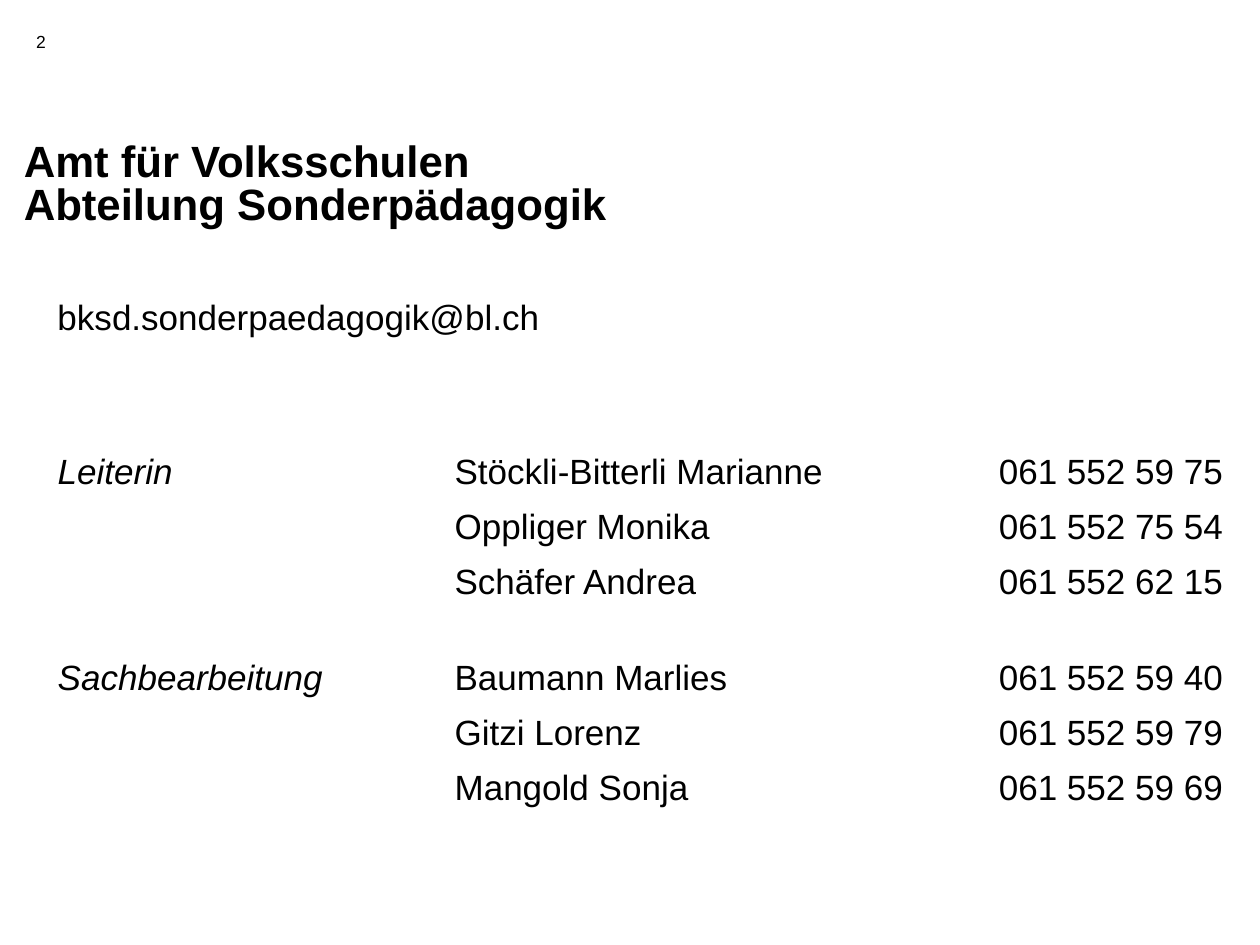
from pptx import Presentation
from pptx.dml.color import RGBColor
from pptx.enum.text import MSO_ANCHOR, PP_ALIGN
from pptx.util import Cm, Pt

BLACK = RGBColor(0, 0, 0)
LEFT = 0.91
WIDTH = 24
ROW = 1.11


def style(para, **extra):
    values = {"name": "Arial", "size": Pt(20), "bold": False, "italic": False}
    for key, value in (values | extra).items():
        setattr(para.font, key, value)
    para.font.color.rgb = BLACK


def add_text(slide, box, lines, inset=True, anchor=MSO_ANCHOR.TOP, pitch=None, **font):
    frame = slide.shapes.add_textbox(*map(Cm, box)).text_frame
    frame.word_wrap = True
    frame.vertical_anchor = anchor
    if not inset:
        for side in ("left", "top", "right", "bottom"):
            setattr(frame, f"margin_{side}", 0)
    frame.text = "\n".join(lines)
    for para in frame.paragraphs:
        para.line_spacing = pitch
        style(para, **font)


def add_staff(slide, top, role, staff):
    size = map(Cm, (LEFT, top, WIDTH, ROW * len(staff)))
    table = slide.shapes.add_table(len(staff), 3, *size).table
    table.first_row = table.horz_banding = False
    for row, (name, phone) in enumerate(staff):
        for col, text in enumerate(("" if row else role, name, phone)):
            cell = table.cell(row, col)
            cell.fill.background()
            cell.vertical_anchor = MSO_ANCHOR.MIDDLE
            cell.text = text
            para = cell.text_frame.paragraphs[0]
            para.alignment = PP_ALIGN.RIGHT if col == 2 else PP_ALIGN.LEFT
            style(para, italic=col == 0)


def main():
    deck = Presentation()
    deck.slide_width, deck.slide_height = Cm(25.4), Cm(19.05)
    slide = deck.slides.add_slide(deck.slide_layouts[6])
    add_text(slide, (0.48, 2.57, 24.4, 2.06),
             ["Amt für Volksschulen", "Abteilung Sonderpädagogik"],
             inset=False, anchor=MSO_ANCHOR.BOTTOM, pitch=Pt(25),
             size=Pt(25), bold=True)
    add_text(slide, (LEFT, 5.84, 10.36, 1.11), ["bksd.sonderpaedagogik@bl.ch"])
    add_text(slide, (0.48, 0.51, 1.12, 1.02), ["2"], size=Pt(10))
    add_staff(slide, 8.97, "Leiterin", [
        ("Stöckli-Bitterli Marianne", "061 552 59 75"),
        ("Oppliger Monika", "061 552 75 54"),
        ("Schäfer Andrea", "061 552 62 15"),
    ])
    add_staff(slide, 13.11, "Sachbearbeitung", [
        ("Baumann Marlies", "061 552 59 40"),
        ("Gitzi Lorenz", "061 552 59 79"),
        ("Mangold Sonja", "061 552 59 69"),
    ])
    deck.save("out.pptx")


if __name__ == "__main__":
    main()
